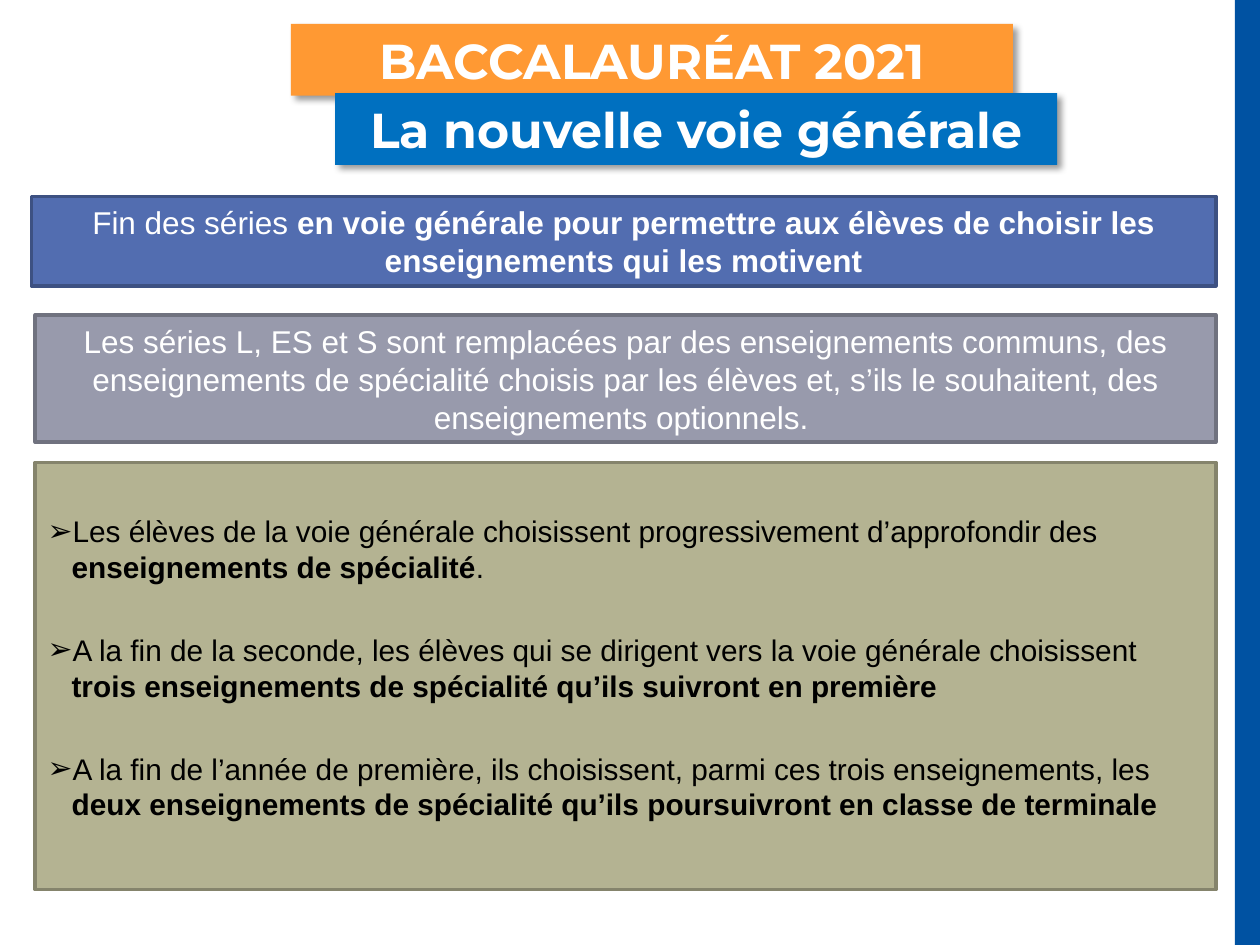
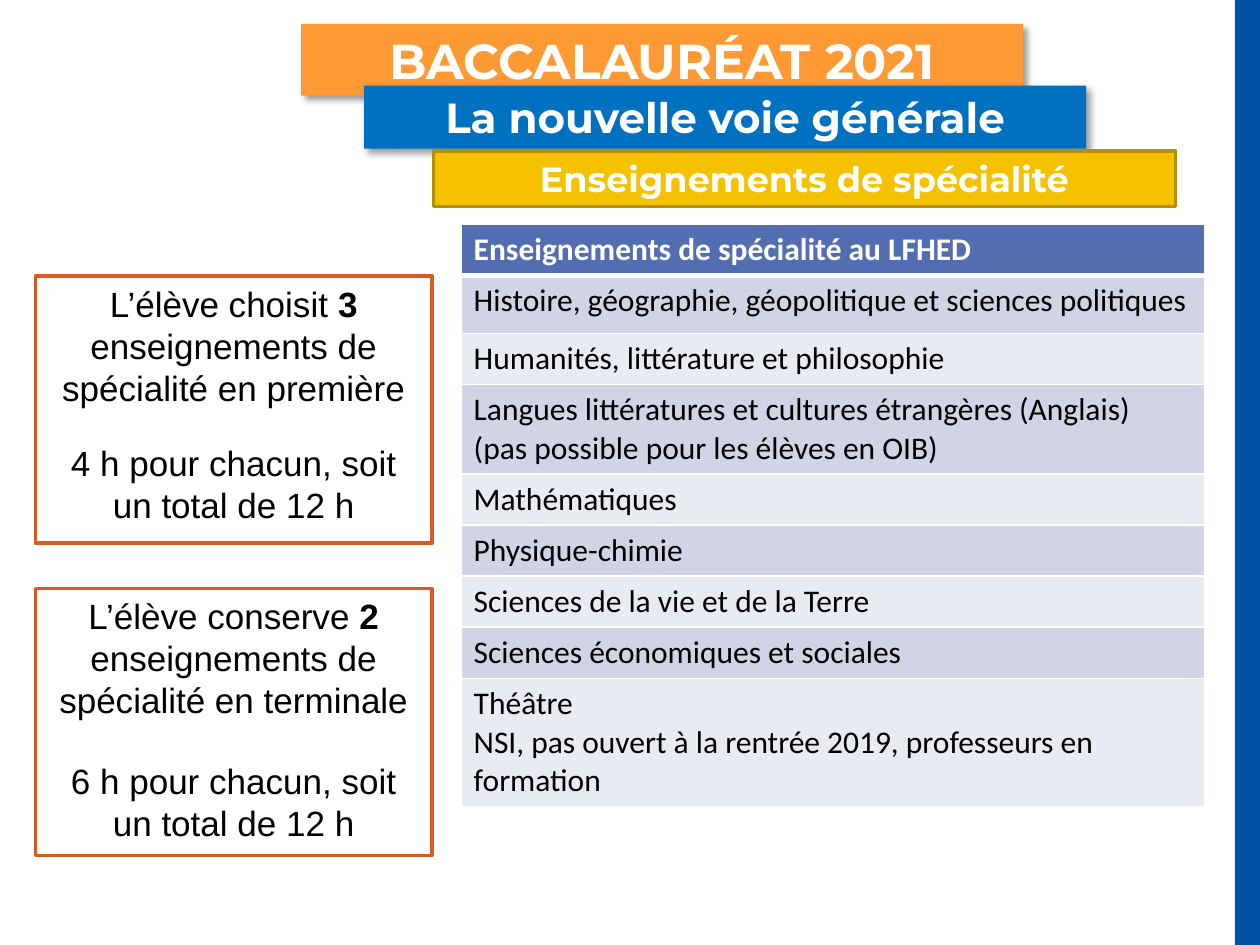
from pptx import Presentation
from pptx.dml.color import RGBColor
from pptx.enum.shapes import MSO_SHAPE
from pptx.enum.text import MSO_ANCHOR, PP_ALIGN
from pptx.oxml import parse_xml
from pptx.oxml.ns import nsdecls, qn
from pptx.util import Inches, Pt

RECTANGLE = MSO_SHAPE.RECTANGLE
TOP, MIDDLE = MSO_ANCHOR.TOP, MSO_ANCHOR.MIDDLE
LEFT, CENTER = PP_ALIGN.LEFT, PP_ALIGN.CENTER

# Grid: 100 columns by 75 rows
UNIT = Inches(0.1)
COLUMNS, ROWS = 100, 75

COLORS = {
    "white": "FFFFFF", "black": "000000", "side": "0052A2",
    "orange": "FF9933", "blue": "0070C0",
    "yellow": "F5C201", "yellow line": "B59001",
    "indigo": "526DB0", "indigo line": "3D5182",
    "grey": "989AAC", "grey line": "70727F",
    "olive": "B4B392", "olive line": "85846C",
    "rust": "DC5924", "dark row": "D1D4E4", "light row": "E9EBF2",
}
TITLE = {"name": "Montserrat", "size": 28, "bold": True, "color": "white"}
SUBTITLE = {**TITLE, "size": 24}
TOPIC = {**TITLE, "size": 20}
BANNER = {"name": "Arial", "size": 18, "color": "white"}
POINT = {"name": "Arial", "size": 17, "color": "black"}
RULE = {"name": "Arial", "size": 20, "color": "black"}
CELL = {"name": "Calibri", "size": 18, "color": "black"}
HEADING = {**CELL, "bold": True, "color": "white"}

POINTS = [
    "Les élèves de la voie générale choisissent progressivement d’approfondir des "
    "*enseignements de spécialité*.",
    "A la fin de la seconde, les élèves qui se dirigent vers la voie générale "
    "choisissent *trois enseignements de spécialité qu’ils suivront en première*",
    "A la fin de l’année de première, ils choisissent, parmi ces trois "
    "enseignements, les *deux enseignements de spécialité qu’ils poursuivront "
    "en classe de terminale*",
]
# Subject lines with the height of their row
SUBJECTS = [
    (["Enseignements de spécialité au LFHED"], 3.9),
    (["Histoire, géographie, géopolitique et sciences politiques"], 4.6),
    (["Humanités, littérature et philosophie"], 4),
    (["Langues littératures et cultures étrangères (Anglais)",
      "(pas possible pour les élèves en OIB)"], 7),
    (["Mathématiques"], 4),
    (["Physique-chimie"], 4),
    (["Sciences de la vie et de la Terre"], 4),
    (["Sciences économiques et sociales"], 4),
    (["Théâtre",
      "NSI, pas ouvert à la rentrée 2019, professeurs en formation"], 10),
]


def rgb(name):
    return RGBColor.from_string(COLORS[name])


def grid(*cells):
    return [round(cell * UNIT) for cell in cells]


def write(frame, texts, style, align=LEFT, gap=0, bullet=None):
    """Write one paragraph per text; *stars* mark bold words."""
    frame.word_wrap = True
    for index, text in enumerate(texts):
        para = frame.paragraphs[0] if index == 0 else frame.add_paragraph()
        para.alignment = align
        if index:
            para.space_before = Pt(gap)
        if bullet:
            add_bullet(para, bullet)
        for number, words in enumerate(text.split("*")):
            if not words:
                continue
            span = para.add_run()
            span.text = words
            values = {"name": style["name"], "size": Pt(style["size"]),
                      "bold": style.get("bold", False) or number % 2 == 1}
            for key, value in values.items():
                setattr(span.font, key, value)
            span.font.color.rgb = rgb(style["color"])


def add_bullet(para, symbol):
    properties = para._p.get_or_add_pPr()
    hang = Inches(0.19)
    properties.set("marL", str(hang))
    properties.set("indent", str(-hang))
    properties.append(parse_xml(f'<a:buFont {nsdecls("a")} typeface="Arial"/>'))
    properties.append(parse_xml(f'<a:buChar {nsdecls("a")} char="{symbol}"/>'))


def add_box(page, area, fill=None, line=None, anchor=MIDDLE):
    box = page.shapes.add_shape(RECTANGLE, *grid(*area))
    box.shadow.inherit = False
    if fill:
        box.fill.solid()
        box.fill.fore_color.rgb = rgb(fill)
    else:
        box.fill.background()
    if line:
        box.line.color.rgb = rgb(line)
        box.line.width = Pt(2)
    else:
        box.line.fill.background()
    box.text_frame.vertical_anchor = anchor
    return box


def add_label(page, area, fill, style, text, line=None):
    box = add_box(page, area, fill, line)
    write(box.text_frame, [text], style, CENTER)
    return box


def add_title(page, area, fill, style, text):
    box = add_label(page, area, fill, style, text)
    effects = box._element.spPr.find(qn("a:effectLst"))
    effects.append(parse_xml(
        f'<a:outerShdw {nsdecls("a")} blurRad="{Pt(4)}" dist="{Pt(3)}" '
        'dir="2700000" algn="tl" rotWithShape="0"><a:srgbClr val="000000">'
        '<a:alpha val="40000"/></a:srgbClr></a:outerShdw>'))


def add_page(deck, title_left, subtitle_area, subtitle_style):
    """Start a page with the side band and the two stacked titles."""
    page = deck.slides.add_slide(deck.slide_layouts[6])
    add_box(page, (COLUMNS - 2, 0, 2, ROWS), "side")
    add_title(page, (title_left, 1.9, 57.3, 5.7), "orange", TITLE,
              "BACCALAURÉAT 2021")
    add_title(page, subtitle_area, "blue", subtitle_style,
              "La nouvelle voie générale")
    return page


def add_borders(cell, bottom):
    properties = cell._tc.get_or_add_tcPr()
    for side, width in (("L", 1), ("R", 1), ("T", 1), ("B", bottom)):
        properties.append(parse_xml(
            f'<a:ln{side} {nsdecls("a")} w="{Pt(width)}"><a:solidFill>'
            f'<a:srgbClr val="{COLORS["white"]}"/></a:solidFill></a:ln{side}>'))


def add_subject_table(page, left, top, width):
    height = sum(row_height for _, row_height in SUBJECTS)
    table = page.shapes.add_table(
        len(SUBJECTS), 1, *grid(left, top, width, height)).table
    for index, (lines, row_height) in enumerate(SUBJECTS):
        table.rows[index].height = grid(row_height)[0]
        cell = table.cell(index, 0)
        add_borders(cell, 1 if index else 3)
        cell.fill.solid()
        band = "dark row" if index % 2 else "light row"
        cell.fill.fore_color.rgb = rgb(band if index else "indigo")
        write(cell.text_frame, lines, CELL if index else HEADING)


def add_rule(page, top, texts, gap):
    box = add_box(page, (2.8, top, 31.5, 21.2), line="rust", anchor=TOP)
    write(box.text_frame, texts, RULE, CENTER, gap)


def build_reform(deck):
    page = add_page(deck, 23.1, (26.6, 7.4, 57.3, 5.7), TITLE)
    points = add_box(page, (2.8, 36.7, 93.7, 33.9), "olive", "olive line", TOP)
    points.text_frame.margin_top = Inches(0.4)
    write(points.text_frame, POINTS, POINT, gap=27, bullet="➢")
    add_label(page, (2.5, 15.6, 94, 7.1), "indigo", BANNER,
              "Fin des séries *en voie générale pour permettre aux élèves de "
              "choisir les enseignements qui les motivent*", "indigo line")
    add_label(page, (2.8, 25, 93.7, 10.1), "grey", BANNER,
              "Les séries L, ES et S sont remplacées par des enseignements "
              "communs, des enseignements de spécialité choisis par les élèves "
              "et, s’ils le souhaitent, des enseignements optionnels. ",
              "grey line")


def build_subjects(deck):
    page = add_page(deck, 23.9, (28.9, 6.8, 57.3, 5), SUBTITLE)
    add_subject_table(page, 36.6, 17.8, 59)
    add_label(page, (34.4, 12, 58.9, 4.4), "yellow", TOPIC,
              "Enseignements de spécialité", "yellow line")
    add_rule(page, 21.9, [
        "L’élève choisit *3* enseignements de spécialité en première",
        "4 h pour chacun, soit un total de 12 h"], 19)
    add_rule(page, 46.7, [
        "L’élève conserve *2 *enseignements de spécialité en terminale",
        "6 h pour chacun, soit un total de 12 h"], 22)


def main():
    deck = Presentation()
    deck.slide_width, deck.slide_height = grid(COLUMNS, ROWS)
    build_reform(deck)
    build_subjects(deck)
    deck.save("out.pptx")


if __name__ == "__main__":
    main()
